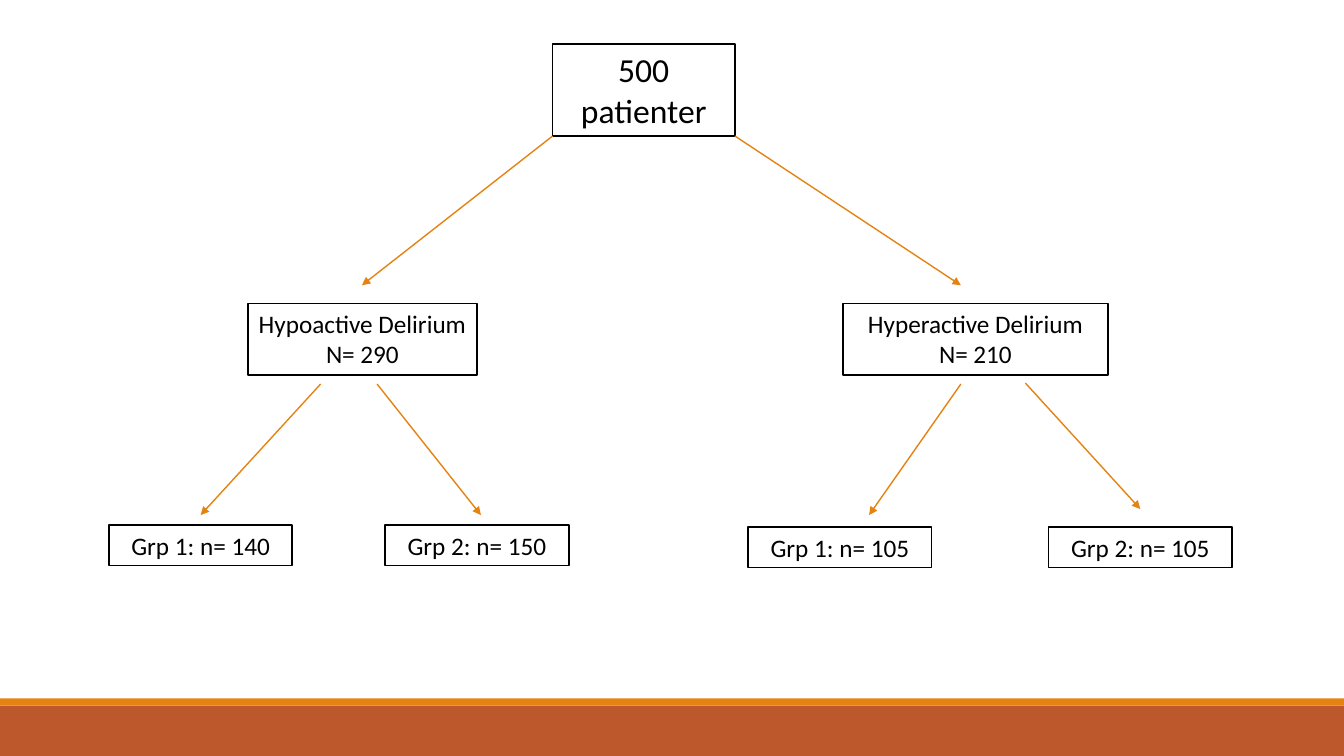
from dataclasses import dataclass

from lxml import etree
from pptx import Presentation
from pptx.dml.color import RGBColor
from pptx.enum.shapes import MSO_CONNECTOR, MSO_SHAPE
from pptx.enum.text import MSO_ANCHOR, MSO_AUTO_SIZE, PP_ALIGN
from pptx.oxml.ns import qn
from pptx.util import Inches, Pt

RECTANGLE = MSO_SHAPE.RECTANGLE
STRAIGHT = MSO_CONNECTOR.STRAIGHT
TOP = MSO_ANCHOR.TOP
FIT_SHAPE = MSO_AUTO_SIZE.SHAPE_TO_FIT_TEXT
CENTER = PP_ALIGN.CENTER


@dataclass(frozen=True)
class Theme:
    font: str = "Calibri"
    ink: RGBColor = RGBColor(0x00, 0x00, 0x00)
    paper: RGBColor = RGBColor(0xFF, 0xFF, 0xFF)
    accent: RGBColor = RGBColor(0xE4, 0x83, 0x12)
    footer: RGBColor = RGBColor(0xBD, 0x58, 0x2C)
    total_size: Pt = Pt(24)
    group_size: Pt = Pt(18)
    border: Pt = Pt(1.25)
    arrow: Pt = Pt(1)


THEME = Theme()
SLIDE_WIDTH, SLIDE_HEIGHT = 13.33, 7.5
TYPE_TOP, TYPE_HEIGHT = 3.01, 0.71
GROUP_WIDTH, GROUP_HEIGHT = 1.82, 0.4

TOTAL = ("500 patienter", 5.48, 0.44, 1.81, 0.91)
DELIRIUM_TYPES = [
    ("Hypoactive Delirium\nN= 290", 2.46, 2.27),
    ("Hyperactive Delirium\nN= 210", 8.36, 2.63),
]
GROUPS = [
    ("Grp 1: n= 140", 1.08, 5.21),
    ("Grp 2: n= 150", 3.82, 5.21),
    ("Grp 1: n= 105", 7.42, 5.23),
    ("Grp 2: n= 105", 10.4, 5.23),
]
BRANCHES = [
    ((5.48, 1.35), (3.59, 2.83)),
    ((7.29, 1.35), (9.53, 2.83)),
    ((3.18, 3.81), (1.99, 5.11)),
    ((3.74, 3.81), (4.77, 5.11)),
    ((9.53, 3.81), (8.62, 5.11)),
    ((10.17, 3.8), (11.31, 5.05)),
]


def add_rectangle(slide, left, top, width, height, color):
    rectangle = slide.shapes.add_shape(
        RECTANGLE, Inches(left), Inches(top), Inches(width), Inches(height)
    )
    rectangle.shadow.inherit = False
    rectangle.fill.solid()
    rectangle.fill.fore_color.rgb = color
    rectangle.line.fill.background()
    return rectangle


def add_box(slide, text, left, top, width, height, size):
    box = add_rectangle(slide, left, top, width, height, THEME.paper)
    box.line.color.rgb = THEME.ink
    box.line.width = THEME.border
    frame = box.text_frame
    frame.word_wrap = True
    frame.auto_size = FIT_SHAPE
    frame.vertical_anchor = TOP
    frame.text = text
    for paragraph in frame.paragraphs:
        paragraph.alignment = CENTER
        for run in paragraph.runs:
            run.font.name = THEME.font
            run.font.size = size
            run.font.color.rgb = THEME.ink


def add_arrow(slide, start, end):
    arrow = slide.shapes.add_connector(
        STRAIGHT, *(Inches(value) for value in (*start, *end))
    )
    arrow.line.color.rgb = THEME.accent
    arrow.line.width = THEME.arrow
    etree.SubElement(arrow.line._get_or_add_ln(), qn("a:tailEnd"), type="triangle")
    etree.SubElement(arrow._element.spPr, qn("a:effectLst"))


def main():
    presentation = Presentation()
    presentation.slide_width = Inches(SLIDE_WIDTH)
    presentation.slide_height = Inches(SLIDE_HEIGHT)
    slide = presentation.slides.add_slide(presentation.slide_layouts[6])

    add_rectangle(slide, 0, 7, SLIDE_WIDTH, 0.5, THEME.footer)
    add_rectangle(slide, 0, 6.93, SLIDE_WIDTH, 0.07, THEME.accent)

    add_box(slide, *TOTAL, THEME.total_size)
    for text, left, width in DELIRIUM_TYPES:
        add_box(slide, text, left, TYPE_TOP, width, TYPE_HEIGHT, THEME.group_size)
    for text, left, top in GROUPS:
        add_box(slide, text, left, top, GROUP_WIDTH, GROUP_HEIGHT, THEME.group_size)
    for start, end in BRANCHES:
        add_arrow(slide, start, end)

    presentation.save("out.pptx")


if __name__ == "__main__":
    main()
